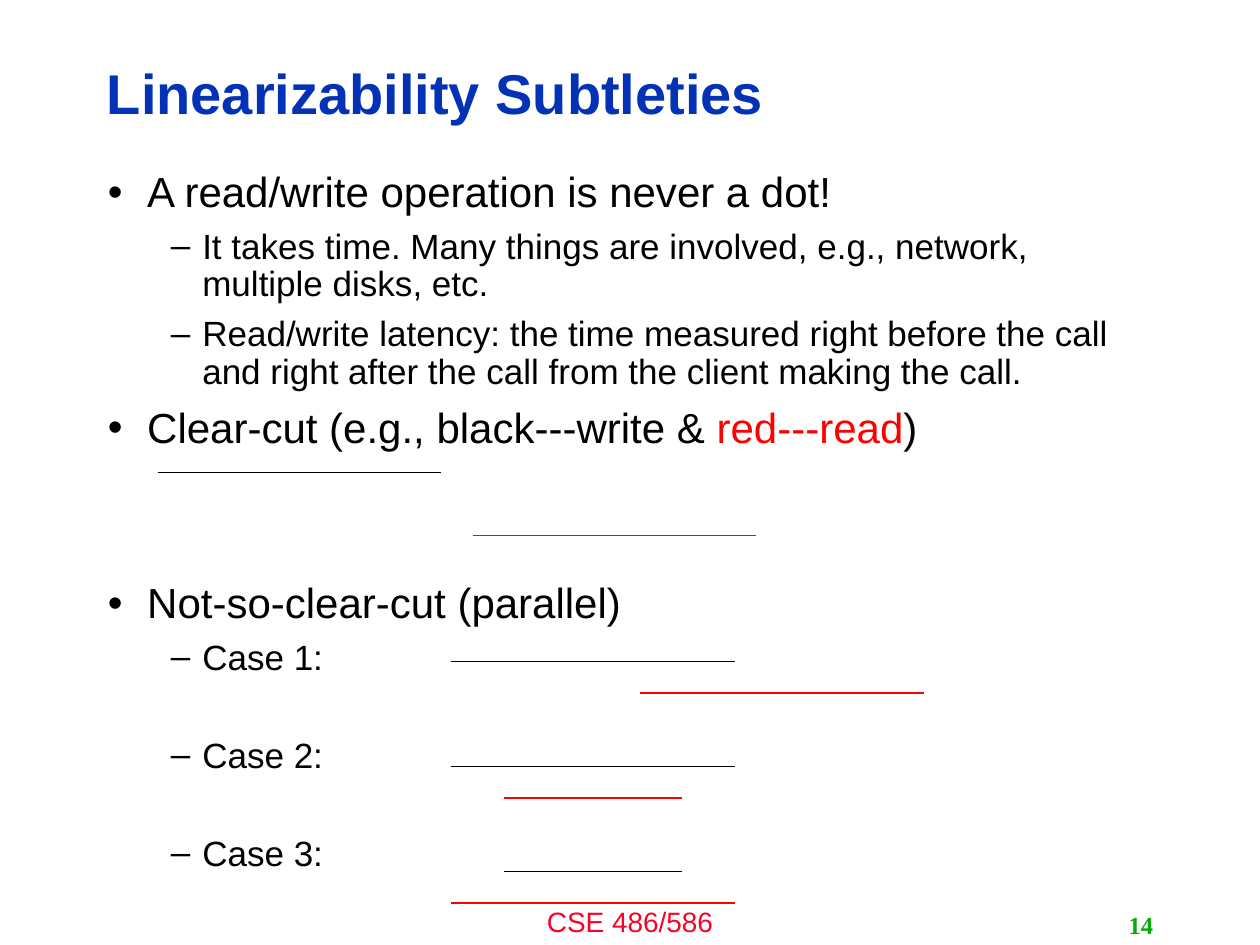
from lxml.etree import SubElement
from pptx import Presentation
from pptx.dml.color import RGBColor
from pptx.enum.shapes import MSO_CONNECTOR
from pptx.enum.text import MSO_ANCHOR, PP_ALIGN
from pptx.oxml.ns import qn
from pptx.util import Pt

BLACK = RGBColor(0, 0, 0)
RED = RGBColor(0xFF, 0, 0)
TITLE_BLUE = RGBColor(0x03, 0x32, 0xB7)
FOOTER_RED = RGBColor(0xFC, 0x01, 0x28)
NUMBER_GREEN = RGBColor(0, 0xAE, 0)

# level: bullet, left margin, indent, font size, space before
LEVELS = [("•", 22.5, -22.5, 24, 8.3), ("–", 54, -18, 20, 6.9)]
LINES_GAP_BEFORE_PARALLEL = 74.5
CASE_GAP = 34.5

# level, runs, space before (None for the level's own)
OUTLINE = [
    (0, [("A read/write operation is never a dot!", BLACK)], 0),
    (1, [("It takes time. Many things are involved, e.g., network, "
          "multiple disks, etc.", BLACK)], None),
    (1, [("Read/write latency: the time measured right before the call "
          "and right after the call from the client making the call.",
          BLACK)], None),
    (0, [("Clear-cut (e.g., black---write & ", BLACK), ("red---read", RED),
         (")", BLACK)], None),
    (0, [("Not-so-clear-cut (parallel)", BLACK)], LINES_GAP_BEFORE_PARALLEL),
    (1, [("Case 1:", BLACK)], None),
    (1, [("Case 2:", BLACK)], CASE_GAP),
    (1, [("Case 3:", BLACK)], CASE_GAP),
]

LONG, SHORT = 162, 102
# left, height on the slide, duration, colour
OPERATIONS = [
    (90, 270, LONG, BLACK), (270, 306, LONG, RED),
    (258, 378, LONG, BLACK), (366, 396, LONG, RED),
    (258, 438, LONG, BLACK), (288, 456, SHORT, RED),
    (288, 498, SHORT, BLACK), (258, 516, LONG, RED),
]


def add_frame(slide, left, top, width, height, anchor=MSO_ANCHOR.TOP):
    box = slide.shapes.add_textbox(Pt(left), Pt(top), Pt(width), Pt(height))
    frame = box.text_frame
    frame.word_wrap = True
    frame.vertical_anchor = anchor
    return frame


def add_run(paragraph, text, size, color, font="Arial", bold=False):
    run = paragraph.add_run()
    run.text = text
    run.font.name = font
    run.font.size = Pt(size)
    run.font.bold = bold
    run.font.color.rgb = color


def set_bullet(paragraph, bullet, margin, indent):
    properties = paragraph._p.get_or_add_pPr()
    properties.set("marL", str(Pt(margin)))
    properties.set("indent", str(Pt(indent)))
    SubElement(properties, qn("a:buFont")).set("typeface", "Arial")
    SubElement(properties, qn("a:buChar")).set("char", bullet)


def add_outline(slide):
    frame = add_frame(slide, 54.5, 94.5, 605, 388)
    for index, (level, runs, gap) in enumerate(OUTLINE):
        bullet, margin, indent, size, level_gap = LEVELS[level]
        paragraph = frame.add_paragraph() if index else frame.paragraphs[0]
        paragraph.level = level
        paragraph.line_spacing = 0.9
        paragraph.space_before = Pt(level_gap if gap is None else gap)
        set_bullet(paragraph, bullet, margin, indent)
        for text, color in runs:
            add_run(paragraph, text, size, color)


def add_operation(slide, left, y, duration, color):
    """Draw the time span of one read or write."""
    span = slide.shapes.add_connector(
        MSO_CONNECTOR.STRAIGHT, Pt(left), Pt(y), Pt(left + duration), Pt(y))
    span.line.color.rgb = color
    span.line.width = Pt(1)
    SubElement(span._element.spPr, qn("a:effectLst"))


def main():
    deck = Presentation()
    deck.slide_width, deck.slide_height = Pt(720), Pt(540)
    slide = deck.slides.add_slide(deck.slide_layouts[6])

    course = add_frame(slide, 240, 513.5, 240, 26.5).paragraphs[0]
    course.alignment = PP_ALIGN.CENTER
    add_run(course, "CSE 486/586", 16, FOOTER_RED)

    title = add_frame(slide, 54, 26, 574.5, 58, MSO_ANCHOR.MIDDLE).paragraphs[0]
    title.line_spacing = 0.9
    add_run(title, "Linearizability Subtleties", 32, TITLE_BLUE, bold=True)

    add_outline(slide)

    number = add_frame(slide, 516, 517, 150, 23, MSO_ANCHOR.MIDDLE).paragraphs[0]
    number.alignment = PP_ALIGN.RIGHT
    add_run(number, "14", 14, NUMBER_GREEN, "Times New Roman", bold=True)

    for operation in OPERATIONS:
        add_operation(slide, *operation)

    deck.save("out.pptx")


if __name__ == "__main__":
    main()
